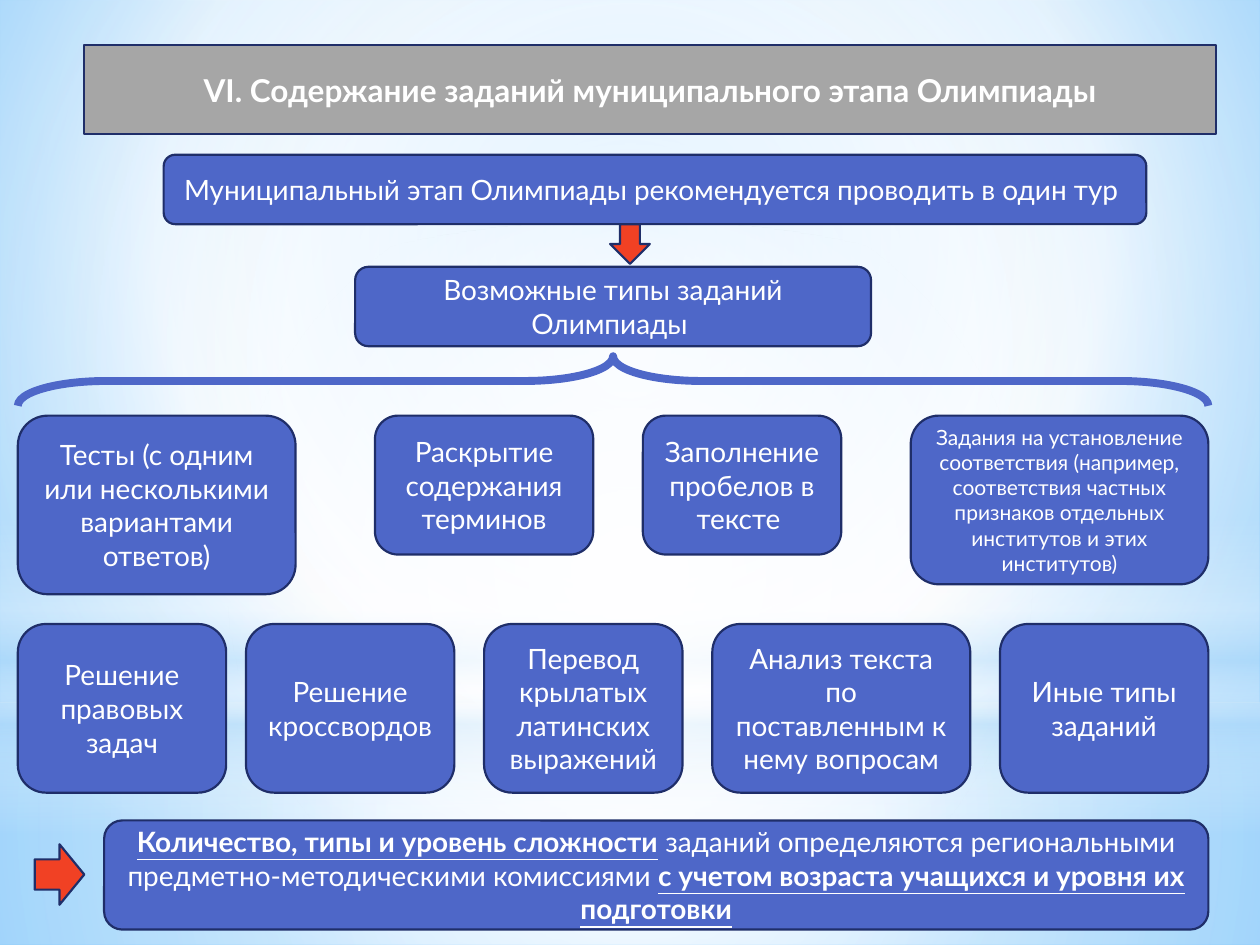
from dataclasses import dataclass

from lxml import etree
from pptx import Presentation
from pptx import util as u
from pptx.dml.color import RGBColor
from pptx.enum import shapes, text
from pptx.oxml import ns

PRESET = shapes.MSO_SHAPE


@dataclass(frozen=True)
class Theme:
    font: str = "Lato"
    white: str = "FFFFFF"
    sky: str = "B4DCFA"
    blue: str = "4E67C8"
    navy: str = "1F2E69"
    grey: str = "A6A6A6"
    red: str = "F14124"
    heading: int = 18
    body: int = 16
    small: int = 12
    border: float = 1.25
    brace: float = 4.5


THEME = Theme()


@dataclass(frozen=True)
class Box:
    left: float
    top: float
    width: float
    height: float

    def lengths(self) -> list:
        return [u.Cm(v) for v in (self.left, self.top, self.width, self.height)]


@dataclass(frozen=True)
class Stop:
    position: int
    color: str
    opacity: int = 100


@dataclass(frozen=True)
class Glow:
    box: Box
    preset: int
    stops: tuple
    center: tuple = (50, 50, 50, 50)


@dataclass(frozen=True)
class Phrase:
    words: str
    strong: bool = False


@dataclass(frozen=True)
class Card:
    box: Box
    phrases: tuple
    size: int = THEME.body


@dataclass(frozen=True)
class TaskType:
    left: float
    width: float
    height: float
    words: str
    size: int = THEME.body


CENTER = (50, 50, 50, 50)
BACKDROP = (Stop(0, "9ED5FF"), Stop(60, THEME.white), Stop(100, "5BB9FF"))
GLOWS = (
    Glow(Box(0, 14.17, 25.4, 4.88), PRESET.RECTANGLE,
         (Stop(0, THEME.white, 91), Stop(37, THEME.white, 76), Stop(100, THEME.sky, 79))),
    Glow(Box(0, 0, 25.4, 14.17), PRESET.RECTANGLE,
         (Stop(0, THEME.white, 89), Stop(48, THEME.white, 62), Stop(100, THEME.sky, 79))),
    Glow(Box(0, 10.46, 25.4, 6.35), PRESET.RECTANGLE,
         (Stop(0, THEME.white, 0), Stop(29, THEME.white, 30), Stop(45, THEME.sky, 40),
          Stop(55, THEME.white, 26), Stop(65, THEME.sky, 60), Stop(100, THEME.white, 0)), ()),
    Glow(Box(0, 4.45, 25.4, 14.17), PRESET.OVAL,
         (Stop(0, THEME.white), Stop(56, THEME.white, 0))),
)
HEADING = Card(Box(1.7, 0.91, 22.81, 1.8),
               (Phrase("VI. Содержание заданий муниципального этапа Олимпиады"),), THEME.heading)
ROUND = Card(Box(3.3, 3.12, 19.81, 1.4),
             (Phrase("Муниципальный этап Олимпиады рекомендуется проводить в один тур "),))
TYPES = Card(Box(7.16, 5.38, 10.4, 1.6), (Phrase("Возможные типы заданий Олимпиады "),))
CONCLUSION = Card(Box(2.1, 16.54, 22.26, 2.2), (
    Phrase("Количество, типы и уровень сложности", True),
    Phrase(" заданий определяются региональными предметно-методическими комиссиями "),
    Phrase("с учетом возраста учащихся и уровня их подготовки", True),
))
TASK_ROWS = {
    8.38: (
        TaskType(0.36, 5.6, 3.6, "Тесты (с одним или несколькими вариантами ответов)"),
        TaskType(7.56, 4.4, 2.8, "Раскрытие содержания терминов"),
        TaskType(12.96, 4, 2.8, "Заполнение пробелов в тексте "),
        TaskType(18.36, 6, 3.4, "Задания на установление соответствия (например, соответствия "
                 "частных признаков отдельных институтов и этих институтов)", THEME.small),
    ),
    12.58: (
        TaskType(0.36, 4.2, 3.4, "Решение правовых задач"),
        TaskType(4.96, 4.2, 3.4, "Решение кроссвордов"),
        TaskType(9.76, 4, 3.4, "Перевод крылатых латинских выражений"),
        TaskType(14.36, 5.2, 3.4, "Анализ текста по поставленным к нему вопросам"),
        TaskType(20.16, 4.2, 3.4, "Иные типы заданий"),
    ),
}


def rgb(color: str) -> RGBColor:
    return RGBColor.from_string(color)


def paint_gradient(fill, owner, stops: tuple, center: tuple) -> None:
    fill.gradient()
    gradient = next(owner.iter(ns.qn("a:gradFill")))
    for child in list(gradient):
        gradient.remove(child)
    stop_list = etree.SubElement(gradient, ns.qn("a:gsLst"))
    for stop in stops:
        mark = etree.SubElement(stop_list, ns.qn("a:gs"), pos=str(stop.position * 1000))
        color = etree.SubElement(mark, ns.qn("a:srgbClr"), val=stop.color)
        etree.SubElement(color, ns.qn("a:alpha"), val=str(stop.opacity * 1000))
    if center:
        circle = etree.SubElement(gradient, ns.qn("a:path"), path="circle")
        sides = {side: str(value * 1000) for side, value in zip("ltrb", center)}
        etree.SubElement(circle, ns.qn("a:fillToRect"), **sides)
    else:
        etree.SubElement(gradient, ns.qn("a:lin"), ang="5400000", scaled="0")


def paint(shape, fill: str) -> None:
    shape.fill.solid()
    shape.fill.fore_color.rgb = rgb(fill)
    shape.line.color.rgb = rgb(THEME.navy)
    shape.line.width = u.Pt(THEME.border)


def add_preset(slide, preset: int, box: Box):
    shape = slide.shapes.add_shape(preset, *box.lengths())
    shape.shadow.inherit = False
    return shape


def write(shape, card: Card, bold: bool = False) -> None:
    frame = shape.text_frame
    frame.word_wrap = True
    frame.vertical_anchor = text.MSO_ANCHOR.MIDDLE
    paragraph = frame.paragraphs[0]
    paragraph.alignment = text.PP_ALIGN.CENTER
    font = paragraph.font
    font.name, font.size, font.bold = THEME.font, u.Pt(card.size), bold
    font.color.rgb = rgb(THEME.white)
    for phrase in card.phrases:
        run = paragraph.add_run()
        run.text = phrase.words
        if phrase.strong:
            run.font.bold = run.font.underline = True


def draw_glow(slide, glow: Glow) -> None:
    shape = add_preset(slide, glow.preset, glow.box)
    shape.line.fill.background()
    paint_gradient(shape.fill, shape.element, glow.stops, glow.center)


def draw_heading(slide, card: Card) -> None:
    title = slide.shapes.title
    title.left, title.top, title.width, title.height = card.box.lengths()
    outline = etree.SubElement(title.element.spPr, ns.qn("a:prstGeom"), prst="roundRect")
    etree.SubElement(outline, ns.qn("a:avLst"))
    paint(title, THEME.grey)
    write(title, card, bold=True)
    title.element.getparent().append(title.element)


def draw_card(slide, card: Card) -> None:
    shape = add_preset(slide, PRESET.ROUNDED_RECTANGLE, card.box)
    paint(shape, THEME.blue)
    write(shape, card)


def draw_brace(slide, box: Box) -> None:
    brace = add_preset(slide, PRESET.RIGHT_BRACE, box)
    brace.rotation = 270
    brace.adjustments[0], brace.adjustments[1] = 1.78, 0.5
    brace.fill.background()
    brace.line.color.rgb = rgb(THEME.blue)
    brace.line.width = u.Pt(THEME.brace)


def main() -> None:
    deck = Presentation()
    deck.slide_width, deck.slide_height = u.Cm(25.4), u.Cm(19.05)
    slide = deck.slides.add_slide(deck.slide_layouts[5])
    paint_gradient(slide.background.fill, slide.element, BACKDROP, (20, 10, 20, 60))
    for glow in GLOWS:
        draw_glow(slide, glow)
    draw_heading(slide, HEADING)
    draw_card(slide, ROUND)
    paint(add_preset(slide, PRESET.DOWN_ARROW, Box(12.3, 4.52, 0.8, 0.8)), THEME.red)
    draw_card(slide, TYPES)
    for top, tasks in TASK_ROWS.items():
        for task in tasks:
            box = Box(task.left, top, task.width, task.height)
            draw_card(slide, Card(box, (Phrase(task.words),), task.size))
    draw_brace(slide, Box(11.86, -4.32, 1, 24))
    draw_card(slide, CONCLUSION)
    paint(add_preset(slide, PRESET.RIGHT_ARROW, Box(0.7, 17.02, 1, 1.22)), THEME.red)
    deck.save("out.pptx")


if __name__ == "__main__":
    main()
